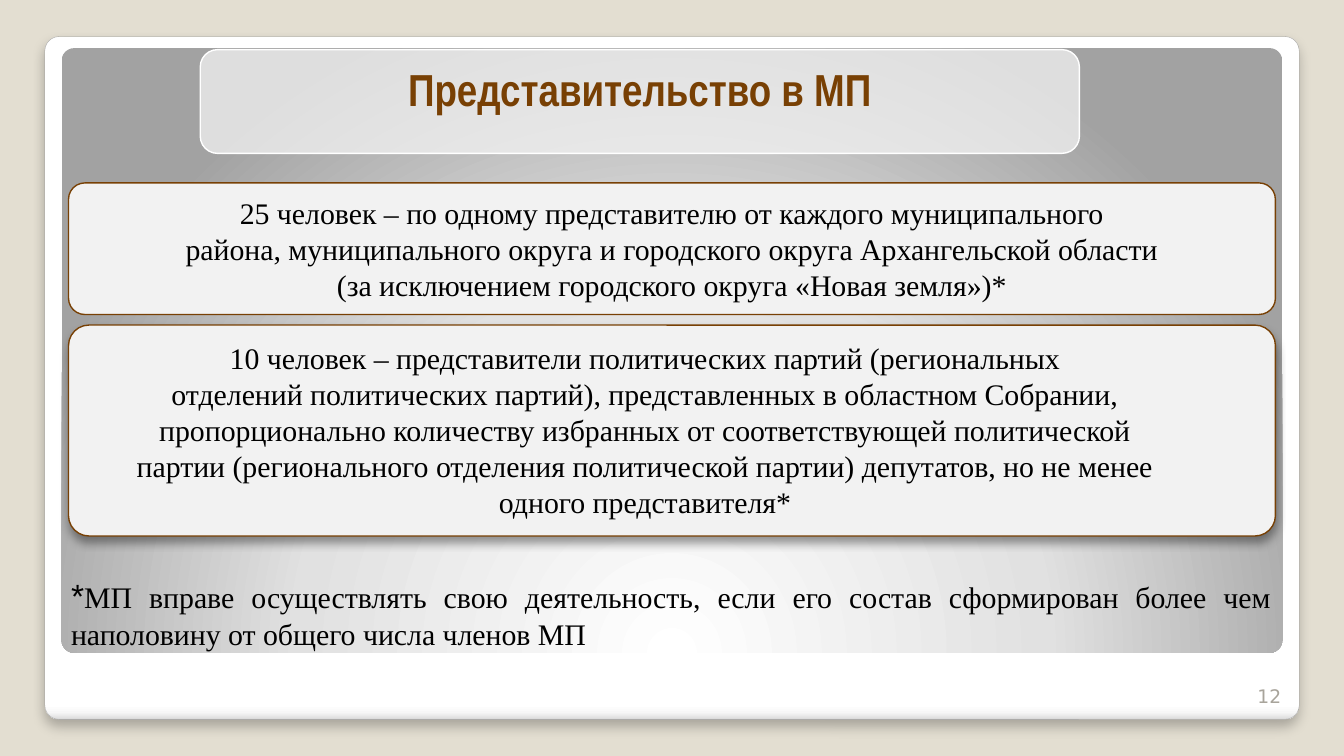
from pptx import Presentation
from pptx.dml.color import RGBColor
from pptx.enum.shapes import MSO_SHAPE
from pptx.enum.text import MSO_ANCHOR, PP_ALIGN
from pptx.oxml import parse_xml
from pptx.oxml.ns import nsdecls
from pptx.util import Pt

ROUND = MSO_SHAPE.ROUNDED_RECTANGLE
TOP, MID, BOTTOM = MSO_ANCHOR.TOP, MSO_ANCHOR.MIDDLE, MSO_ANCHOR.BOTTOM
CENTER, RIGHT, JUST = PP_ALIGN.CENTER, PP_ALIGN.RIGHT, PP_ALIGN.JUSTIFY

COLORS = {
    "back": "E3DED1", "edge": "A4A4A4", "white": "FFFFFF", "pale": "F2F2F2",
    "brown": "784004", "black": "000000", "gray": "A8A49B",
}
HEAD = ("Arial Narrow", 24, "brown", True)
BODY = ("Times New Roman", 16, "black", False)
STAR = ("Arial", 18, "black", False)
PAGE = ("DejaVu Sans", 10, "gray", False)

TITLE = "Представительство в МП"
LOCAL = [
    "25 человек – по одному представителю от каждого муниципального",
    "района, муниципального округа и городского округа Архангельской области",
    "(за исключением городского округа «Новая земля»)*",
]
PARTY = [
    "10 человек – представители политических партий (региональных",
    "отделений политических партий), представленных в областном Собрании,",
    "пропорционально количеству избранных от соответствующей политической",
    "партии (регионального отделения политической партии) депутатов, но не менее",
    "одного представителя*",
]
NOTE = ("МП вправе осуществлять свою деятельность, если его состав "
        "сформирован более чем наполовину от общего числа членов МП")
NUMBER = "12"

FRAME = [(0, "FFFFFF"), (98, "FFFFFF"), (99, "F7F7F7"), (100, "DADADA")]
GLOW = [(0, "FFFFFF"), (55, "E1E1E1"), (100, "A2A2A2")]
DOWN = '<a:lin ang="5400000" scaled="0"/>'
RADIAL = ('<a:path path="circle"><a:fillToRect l="50000" t="175000" '
          'r="50000" b="-75000"/></a:path>')
LEFT, WIDE = 36.72, 646.56


def color(name):
    return RGBColor.from_string(COLORS[name])


def panel(box, adj, fill=None, line=None, width=0.75):
    shape = slide.shapes.add_shape(ROUND, *map(Pt, box))
    shape.adjustments[0] = adj
    shape.shadow.inherit = False
    if fill:
        shape.fill.solid()
        shape.fill.fore_color.rgb = color(fill)
    if line:
        shape.line.color.rgb = color(line)
        shape.line.width = Pt(width)
    else:
        shape.line.fill.background()
    return shape


def blend(shape, stops, kind):
    marks = "".join(f'<a:gs pos="{pos * 1000}"><a:srgbClr val="{hue}"/></a:gs>'
                    for pos, hue in stops)
    shape._element.spPr.insert(2, parse_xml(
        f'<a:gradFill {nsdecls("a")} rotWithShape="1">'
        f'<a:gsLst>{marks}</a:gsLst>{kind}</a:gradFill>'))


def shade(shape, alpha, blur, dist):
    effect = shape._element.spPr.find("{*}effectLst")
    effect.append(parse_xml(
        f'<a:outerShdw {nsdecls("a")} blurRad="{Pt(blur)}" dist="{Pt(dist)}" '
        f'dir="5400000" algn="t" rotWithShape="0"><a:srgbClr val="{COLORS["black"]}">'
        f'<a:alpha val="{alpha * 1000}"/></a:srgbClr></a:outerShdw>'))


def write(shape, lines, align, anchor=TOP):
    frame = shape.text_frame
    frame.word_wrap = True
    frame.vertical_anchor = anchor
    for i, runs in enumerate(lines):
        para = frame.add_paragraph() if i else frame.paragraphs[0]
        para.alignment = align
        for text, (face, size, hue, bold) in runs:
            run = para.add_run()
            run.text = text
            run.font.name = face
            run.font.size = Pt(size)
            run.font.bold = bold
            run.font.color.rgb = color(hue)


def label(box, lines, align, anchor=TOP):
    write(slide.shapes.add_textbox(*map(Pt, box)), lines, align, anchor)


deck = Presentation()
deck.slide_width, deck.slide_height = Pt(720), Pt(405)
slide = deck.slides.add_slide(deck.slide_layouts[6])
slide.background.fill.solid()
slide.background.fill.fore_color.rgb = color("back")

frame = panel((24, 19.6, 672, 365.8), 0.021, line="edge", width=0.16)
blend(frame, FRAME, DOWN)
shade(frame, 25, 6, 4)
blend(panel((33, 25.8, 654, 324), 0.021), GLOW, RADIAL)

title = panel((107.3, 26.6, 471, 55.6), 0.167, "pale", "white")
tint = title._element.spPr.find("{*}solidFill")[0]
tint.append(parse_xml(f'<a:alpha {nsdecls("a")} val="76000"/>'))
write(title, [[(TITLE, HEAD)]], CENTER)

local = panel((LEFT, 98, WIDE, 70.5), 0.124, "pale", "brown")
write(local, [[(line, BODY)] for line in LOCAL], CENTER, MID)

shade(panel((LEFT, 174.2, WIDE, 113), 0.097, "pale", "brown"), 40, 5.2, 3)
label((25.2, 178.6, 640.8, 104.4), [[(line, BODY)] for line in PARTY], CENTER)
label((31, 304.6, 657.4, 48.2), [[("*", STAR), (NOTE, BODY)]], JUST)
label((657.4, 360.7, 36, 21.6), [[(NUMBER, PAGE)]], RIGHT, BOTTOM)

deck.save("out.pptx")
